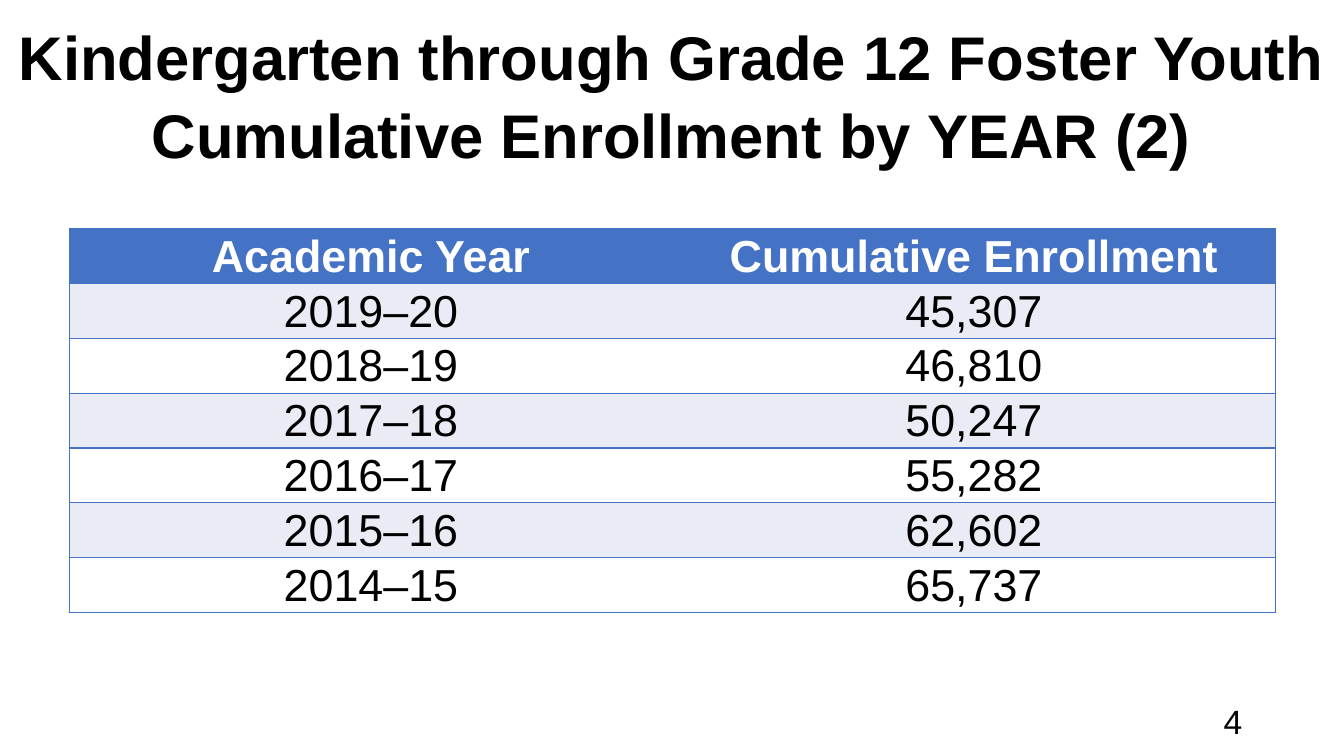
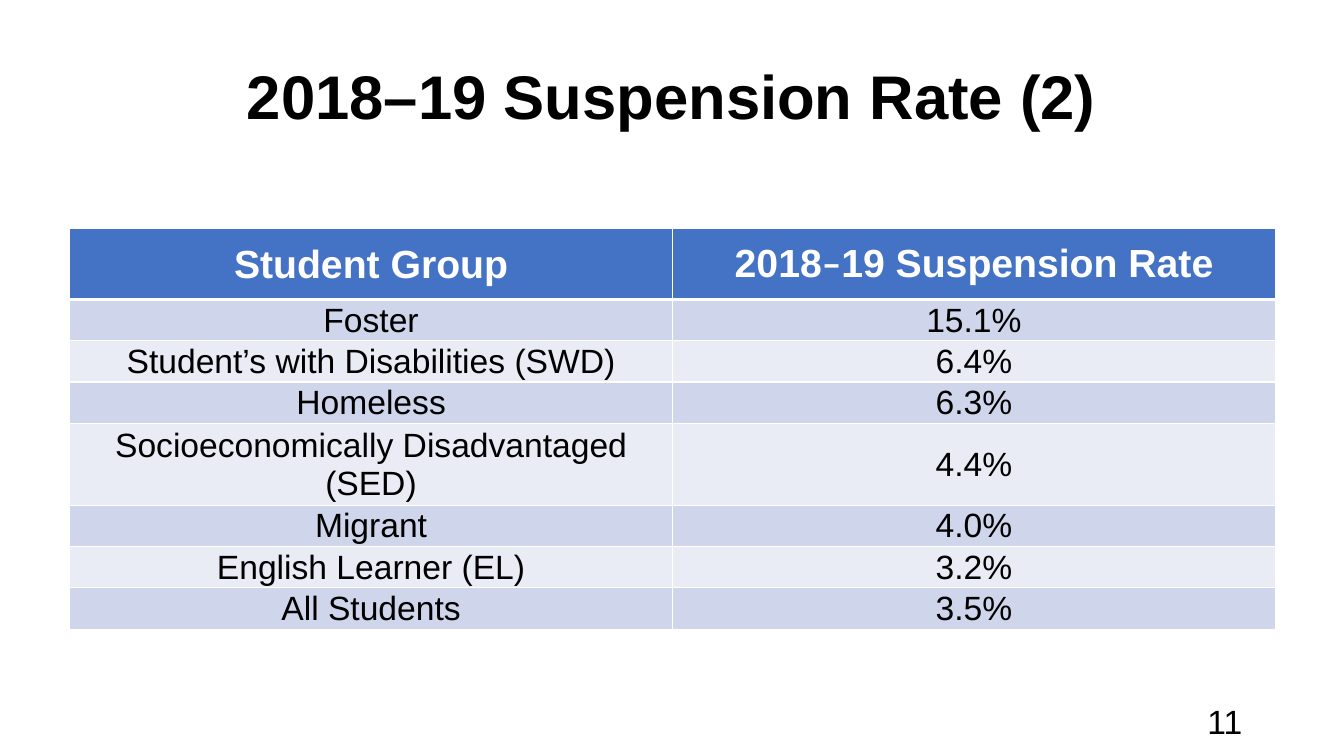
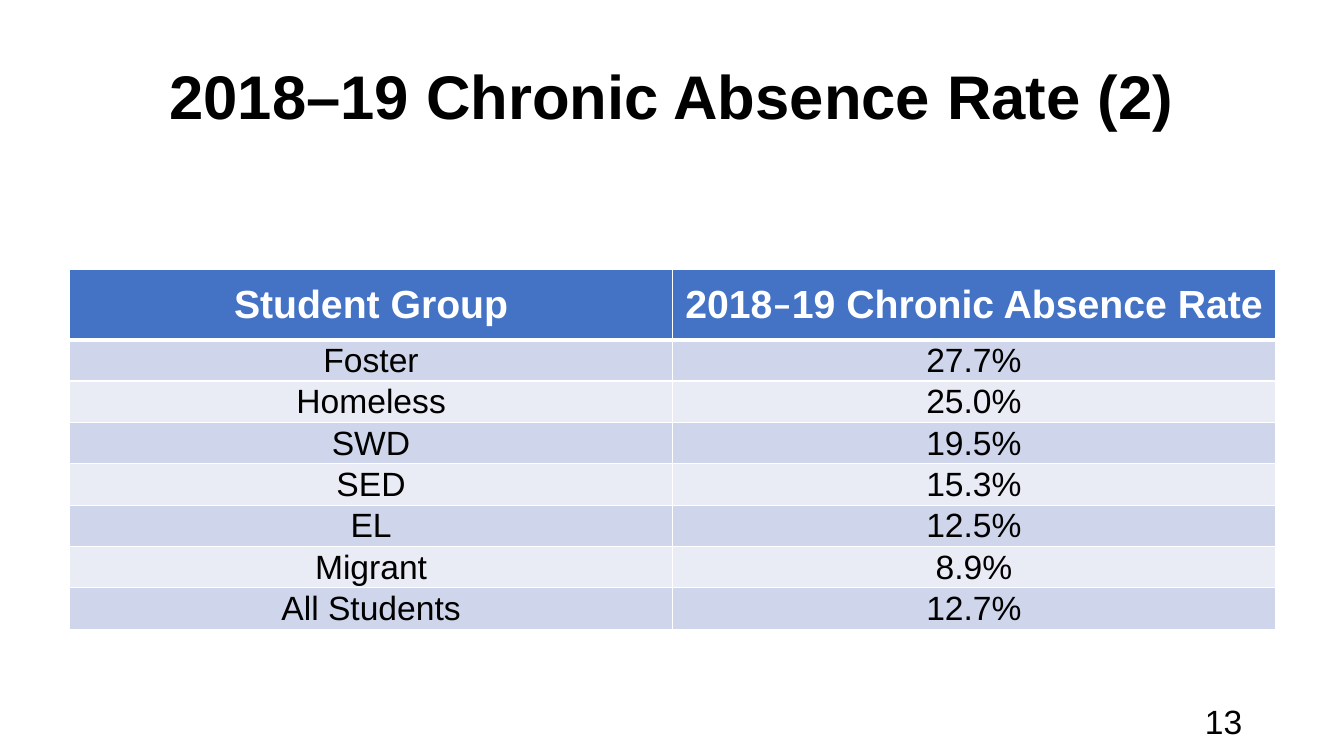
"""Build three foster youth data slides, each a title, a two-column table and a page number."""
from dataclasses import dataclass

from lxml.etree import SubElement
from pptx import Presentation
from pptx.dml.color import RGBColor
from pptx.enum.text import MSO_ANCHOR, MSO_AUTO_SIZE, PP_ALIGN
from pptx.oxml.ns import qn
from pptx.util import Inches, Pt

SLIDES = [
    {
        "title": "Kindergarten through Grade 12 Foster Youth Cumulative Enrollment by YEAR (2)",
        "page": "4",
        "look": "ruled",
        "top": 2.27,
        "header": [["Academic Year"], ["Cumulative Enrollment"]],
        "rows": [
            ("2019–20", "45,307"),
            ("2018–19", "46,810"),
            ("2017–18", "50,247"),
            ("2016–17", "55,282"),
            ("2015–16", "62,602"),
            ("2014–15", "65,737"),
        ],
    },
    {
        "title": "2018–19 Suspension Rate (2)",
        "page": "11",
        "look": "banded",
        "top": 2.27,
        "header": [["Student Group"], ["2018", "–", "19 Suspension Rate"]],
        "rows": [
            ("Foster", "15.1%"),
            ("Student’s with Disabilities (SWD)", "6.4%"),
            ("Homeless", "6.3%"),
            ("Socioeconomically Disadvantaged (SED)", "4.4%"),
            ("Migrant", "4.0%"),
            ("English Learner (EL)", "3.2%"),
            ("All Students", "3.5%"),
        ],
    },
    {
        "title": "2018–19 Chronic Absence Rate (2)",
        "page": "13",
        "look": "banded",
        "top": 2.67,
        "header": [["Student Group"], ["2018", "–", "19 Chronic Absence Rate"]],
        "rows": [
            ("Foster", "27.7%"),
            ("Homeless", "25.0%"),
            ("SWD", "19.5%"),
            ("SED", "15.3%"),
            ("EL", "12.5%"),
            ("Migrant", "8.9%"),
            ("All Students", "12.7%"),
        ],
    },
]


@dataclass(frozen=True)
class Theme:
    """Colours, fonts and type sizes of the deck."""
    font: str = "Arial"
    dash_font: str = "Calibri"
    ink: str = "000000"
    white: str = "FFFFFF"
    accent: str = "4472C4"
    title_size: int = 44
    page_size: int = 24


@dataclass(frozen=True)
class Look:
    """Appearance of one kind of table."""
    head_size: int
    body_size: int
    head_height: float
    bands: tuple
    line: str
    head_rule: int
    inner_columns: bool


THEME = Theme()
LOOKS = {
    "ruled": Look(32, 32, 0.41, ("E9EBF5", THEME.white), THEME.accent, 1, False),
    "banded": Look(28, 24, 0.7, ("CFD5EA", "E9EBF5"), THEME.white, 3, True),
}
WIDTH, HEIGHT = 13.33, 7.5
TITLE_HEIGHT = 1.8
TABLE_LEFT, TABLE_WIDTH = 0.69, 11.96
ROW_HEIGHT = 0.41
PLAIN_STYLE = "{2D5ABB26-0587-4C30-8999-92F81FD0307C}"


def write(paragraph, pieces, size, color, align, bold=False):
    """Add the pieces of one line as runs, a lone dash in its own font."""
    paragraph.alignment = align
    for piece in pieces:
        run = paragraph.add_run()
        run.text = piece
        font = run.font
        font.name = THEME.dash_font if piece == "–" else THEME.font
        font.size, font.bold = Pt(size), bold
        font.color.rgb = RGBColor.from_string(color)


def add_title(slide, words):
    """Place and format the title placeholder."""
    title = slide.shapes.title
    title.left = title.top = 0
    title.width, title.height = Inches(WIDTH), Inches(TITLE_HEIGHT)
    frame = title.text_frame
    frame.auto_size = MSO_AUTO_SIZE.NONE
    frame.vertical_anchor = MSO_ANCHOR.MIDDLE
    frame.margin_top = Inches(0.09)
    frame.paragraphs[0].line_spacing = 1.05
    write(frame.paragraphs[0], [words], THEME.title_size, THEME.ink, PP_ALIGN.CENTER, True)


def add_page_number(slide, number):
    """Write the page number at the lower right."""
    box = slide.shapes.add_textbox(Inches(9.42), Inches(6.95), Inches(3), Inches(0.4))
    frame = box.text_frame
    frame.word_wrap = True
    frame.vertical_anchor = MSO_ANCHOR.MIDDLE
    write(frame.paragraphs[0], [number], THEME.page_size, THEME.ink, PP_ALIGN.RIGHT)


def draw_borders(cell, color, widths):
    """Draw the left, right, top and bottom borders; a zero width leaves one out."""
    properties = cell._tc.get_or_add_tcPr()
    for side, width in zip("LRTB", widths):
        line = SubElement(properties, qn(f"a:ln{side}"), w=str(Pt(width)))
        if width:
            fill = SubElement(line, qn("a:solidFill"))
            SubElement(fill, qn("a:srgbClr"), val=color)
        else:
            SubElement(line, qn("a:noFill"))


def add_data_table(slide, content):
    """Add the table with its header row and alternating bands."""
    look = LOOKS[content["look"]]
    lines = [content["header"]] + [[[value] for value in row] for row in content["rows"]]
    columns = len(content["header"])
    height = look.head_height + ROW_HEIGHT * len(content["rows"])
    table = slide.shapes.add_table(
        len(lines), columns, Inches(TABLE_LEFT), Inches(content["top"]),
        Inches(TABLE_WIDTH), Inches(height)).table
    table._tbl.tblPr.find(qn("a:tableStyleId")).text = PLAIN_STYLE
    for column in table.columns:
        column.width = Inches(TABLE_WIDTH / columns)
    for r, line in enumerate(lines):
        head = r == 0
        table.rows[r].height = Inches(look.head_height if head else ROW_HEIGHT)
        fill = THEME.accent if head else look.bands[(r - 1) % 2]
        size = look.head_size if head else look.body_size
        for c, pieces in enumerate(line):
            cell = table.cell(r, c)
            cell.vertical_anchor = MSO_ANCHOR.MIDDLE
            cell.margin_left = cell.margin_right = cell.margin_top = Inches(0.01)
            cell.margin_bottom = 0
            draw_borders(cell, look.line, (
                int(look.inner_columns or c == 0),
                int(look.inner_columns or c == columns - 1),
                look.head_rule if r == 1 else 1,
                look.head_rule if head else 1))
            cell.fill.solid()
            cell.fill.fore_color.rgb = RGBColor.from_string(fill)
            write(cell.text_frame.paragraphs[0], pieces, size,
                  THEME.white if head else THEME.ink, PP_ALIGN.CENTER, head)


def main():
    """Build and save the deck."""
    deck = Presentation()
    deck.slide_width, deck.slide_height = Inches(WIDTH), Inches(HEIGHT)
    for content in SLIDES:
        slide = deck.slides.add_slide(deck.slide_layouts[5])
        add_title(slide, content["title"])
        add_page_number(slide, content["page"])
        add_data_table(slide, content)
    deck.save("out.pptx")


if __name__ == "__main__":
    main()
